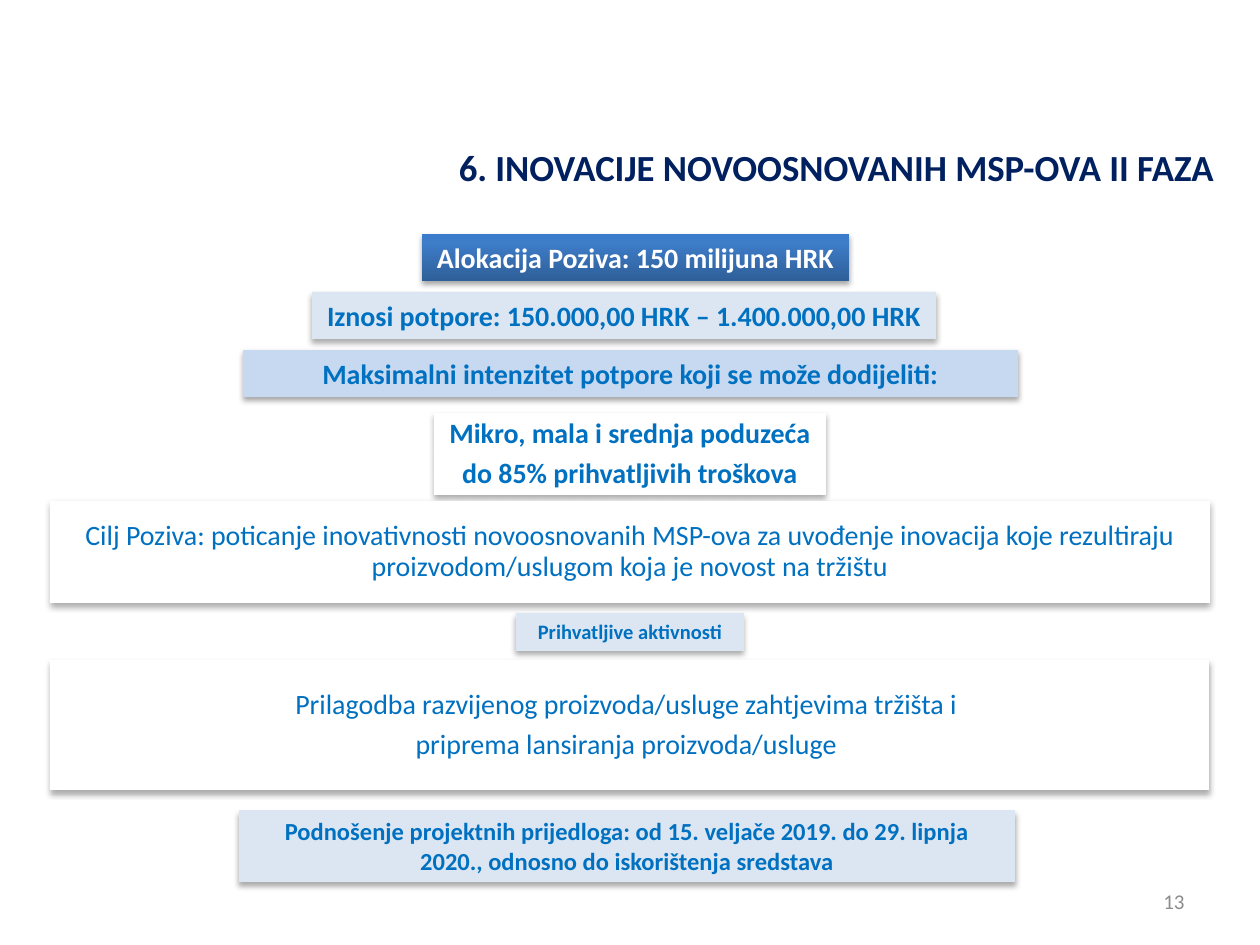
"""Build the slide on the second phase of the SME innovation call."""
from copy import deepcopy
from lxml import etree
from pptx import Presentation
from pptx.dml.color import RGBColor
from pptx.enum.shapes import MSO_SHAPE
from pptx.enum.text import MSO_ANCHOR, MSO_AUTO_SIZE, PP_ALIGN
from pptx.oxml.ns import qn
from pptx.util import Pt

RECT = MSO_SHAPE.RECTANGLE
TOP, MID = MSO_ANCHOR.TOP, MSO_ANCHOR.MIDDLE
MIDST, RIGHT = PP_ALIGN.CENTER, PP_ALIGN.RIGHT
FIXED = MSO_AUTO_SIZE.NONE
PX = 914400 / 126
TINT = {"navy": "002060", "blue": "0070C0", "white": "FFFFFF", "pale": "DCE6F2",
        "sky": "C6D9F1", "grey": "8C8C8C", "black": "000000"}
GRAD = [(0, "2F5F99"), (0.8, "3D7CC7"), (1, "3A7CCB")]
SOFT = {"alpha": 35, "blur": 3.1, "dist": 1.8}
DEEP = {"alpha": 32, "blur": 3.5, "dist": 2.2}
HEAD = {"size": 16, "bold": True}
BODY = {"size": 16, "bold": False}
PLAIN = {"space": 1, "after": 0, "anchor": TOP}
LOOSE = {"space": 0.9, "after": 5.5, "anchor": MID}

TITLE = "6. INOVACIJE NOVOOSNOVANIH MSP-OVA II FAZA "
NUMBER = "13"
BOXES = [
    (["Alokacija Poziva: 150 milijuna HRK"],
     (422, 234, 427, 47), None, SOFT, HEAD | {"tint": "white"}, PLAIN),
    (["Maksimalni intenzitet potpore koji se može dodijeliti:"],
     (243, 350, 775, 47), "sky", SOFT, HEAD, PLAIN),
    (["Iznosi potpore: 150.000,00 HRK – 1.400.000,00 HRK"],
     (312, 292, 624, 47), "pale", DEEP, HEAD, PLAIN),
    (["Mikro, mala i srednja poduzeća", "do 85% prihvatljivih troškova"],
     (434, 413, 392, 82), "white", DEEP, HEAD, LOOSE),
    (["Cilj Poziva: poticanje inovativnosti novoosnovanih MSP-ova za uvođenje "
      "inovacija koje rezultiraju proizvodom/uslugom koja je novost na tržištu"],
     (50, 501, 1160, 102), "white", DEEP, BODY, LOOSE),
    (["Prilagodba razvijenog proizvoda/usluge zahtjevima tržišta i ",
      "priprema lansiranja proizvoda/usluge "],
     (50, 660, 1159, 130), "white", DEEP, BODY, LOOSE),
    (["Prihvatljive aktivnosti"],
     (516, 613, 228, 38), "pale", DEEP, HEAD | {"size": 11.7}, PLAIN),
    (["Podnošenje projektnih prijedloga: od 15. veljače 2019. do 29. lipnja "
      "2020., odnosno do iskorištenja sredstava"],
     (239, 810, 776, 72), "pale", DEEP, HEAD | {"size": 14}, PLAIN),
]


def rgb(name):
    return RGBColor.from_string(TINT.get(name, name))


def place(shape, spot):
    for name, num in zip(("left", "top", "width", "height"), spot):
        setattr(shape, name, round(num * PX))


def write(shape, lines, font, flow, align):
    frame = shape.text_frame
    form = {"word_wrap": True, "auto_size": FIXED, "vertical_anchor": flow["anchor"]}
    for name, val in form.items():
        setattr(frame, name, val)
    frame.text = "\n".join(lines)
    look = {"name": "Calibri", "size": Pt(font["size"]), "bold": font["bold"]}
    for para in frame.paragraphs:
        para.alignment = align
        para.line_spacing = flow["space"]
        para.space_after = Pt(flow["after"])
        run = para.runs[0].font
        for name, val in look.items():
            setattr(run, name, val)
        run.color.rgb = rgb(font.get("tint", "blue"))


def blend(fill):
    fill.gradient()
    fill.gradient_angle = 90
    stops = fill.gradient_stops
    last = stops[1]._gs
    last.addnext(deepcopy(last))
    for stop, (pos, tone) in zip(fill.gradient_stops, GRAD):
        stop.position = pos
        stop.color.rgb = rgb(tone)


def shade(shape, cast):
    shape.shadow.inherit = False
    root = shape._element.spPr.find(qn("a:effectLst"))
    drop = etree.SubElement(root, qn("a:outerShdw"), {
        "blurRad": str(Pt(cast["blur"])), "dist": str(Pt(cast["dist"])),
        "dir": "5400000", "rotWithShape": "0"})
    tone = etree.SubElement(drop, qn("a:srgbClr"), val=TINT["black"])
    etree.SubElement(tone, qn("a:alpha"), val=str(cast["alpha"] * 1000))


def panel(slide, lines, spot, fill, cast, font, flow):
    shape = slide.shapes.add_shape(RECT, 0, 0, 0, 0)
    place(shape, spot)
    if fill:
        shape.fill.solid()
        shape.fill.fore_color.rgb = rgb(fill)
    else:
        blend(shape.fill)
    shape.line.fill.background()
    shade(shape, cast)
    write(shape, lines, font, flow, MIDST)


def main():
    deck = Presentation()
    deck.slide_width, deck.slide_height = round(1260 * PX), round(945 * PX)
    slide = deck.slides.add_slide(deck.slide_layouts[5])
    for box in BOXES:
        panel(slide, *box)
    title = slide.shapes.title
    place(title, (402, 132, 833, 64))
    write(title, [TITLE], {"size": 21, "bold": True, "tint": "navy"},
          PLAIN | {"space": 1.15}, RIGHT)
    page = slide.shapes.add_textbox(0, 0, 0, 0)
    place(page, (903, 876, 294, 50))
    write(page, [NUMBER], {"size": 12, "bold": False, "tint": "grey"},
          PLAIN | {"anchor": MID}, RIGHT)
    deck.save("out.pptx")


if __name__ == "__main__":
    main()
